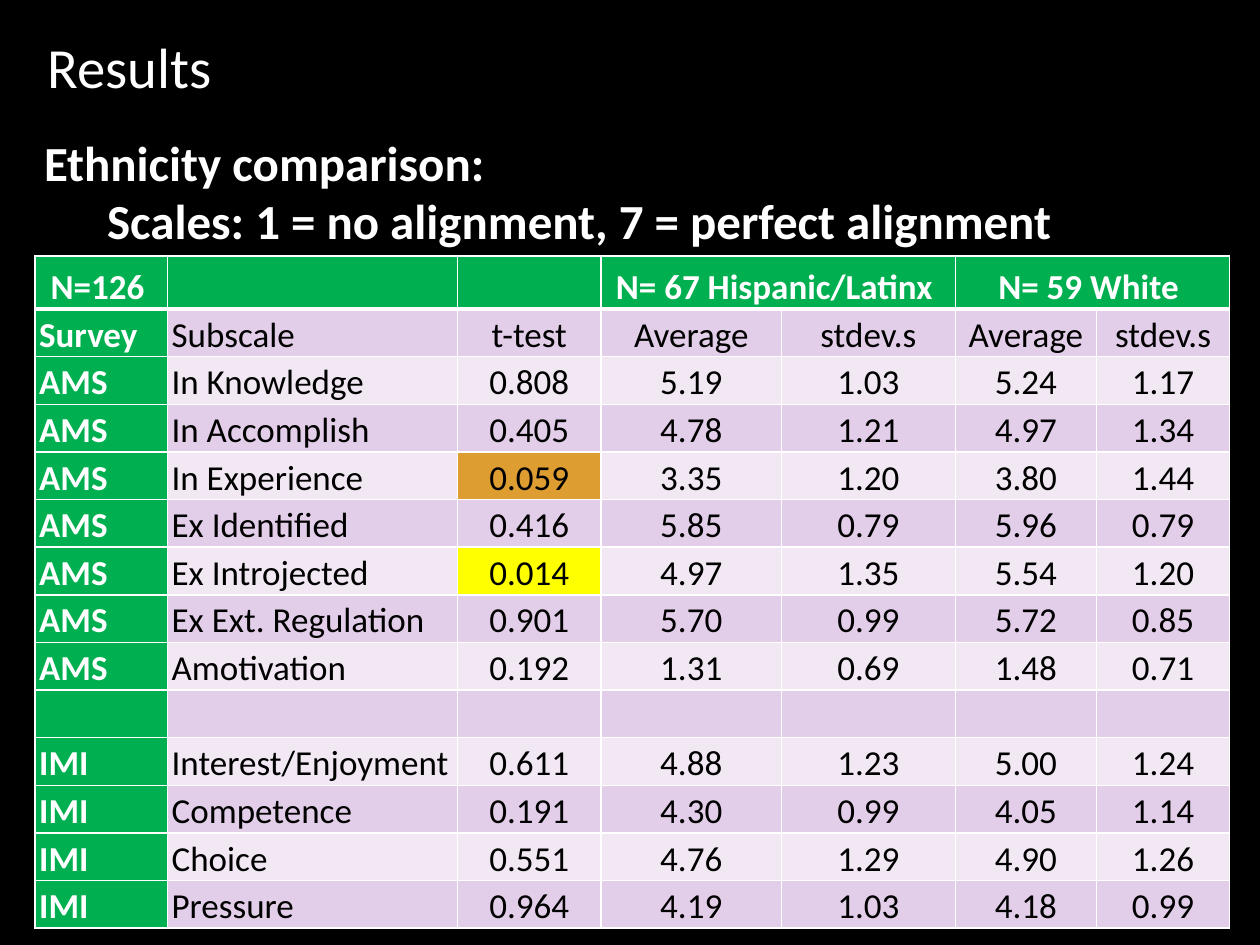
from typing import NamedTuple

from lxml import etree
from pptx import Presentation
from pptx.dml.color import RGBColor
from pptx.enum import text
from pptx.oxml.ns import qn
from pptx.util import Cm, Pt

WHITE, BLACK, GREEN = "FFFFFF", "000000", "00B050"
BANDS = ("E3CEE9", "F1E8F4")
HIGHLIGHTS = {"0.059": "DD9D31", "0.014": "FFFF00"}
COLUMN_WIDTHS = (2.67, 5.84, 2.9, 3.63, 3.51, 2.84, 2.69)
HEADER_HEIGHT, ROW_HEIGHT = 1.07, 0.96


class Row(NamedTuple):
    survey: str = ""
    subscale: str = ""
    t_test: str = ""
    hispanic_average: str = ""
    hispanic_stdev: str = ""
    white_average: str = ""
    white_stdev: str = ""


HEADER = Row("N=126\u00a0", hispanic_average="N= 67 Hispanic/Latinx\u00a0",
             white_average="N= 59 White\u00a0")
ROWS = [
    Row("Survey", "Subscale", "t-test", "Average", "stdev.s", "Average", "stdev.s"),
    Row("AMS", "In Knowledge", "0.808", "5.19", "1.03", "5.24", "1.17"),
    Row("AMS", "In Accomplish", "0.405", "4.78", "1.21", "4.97", "1.34"),
    Row("AMS", "In Experience", "0.059", "3.35", "1.20", "3.80", "1.44"),
    Row("AMS", "Ex Identified", "0.416", "5.85", "0.79", "5.96", "0.79"),
    Row("AMS", "Ex Introjected", "0.014", "4.97", "1.35", "5.54", "1.20"),
    Row("AMS", "Ex Ext. Regulation", "0.901", "5.70", "0.99", "5.72", "0.85"),
    Row("AMS", "Amotivation", "0.192", "1.31", "0.69", "1.48", "0.71"),
    Row(),
    Row("IMI", "Interest/Enjoyment", "0.611", "4.88", "1.23", "5.00", "1.24"),
    Row("IMI", "Competence", "0.191", "4.30", "0.99", "4.05", "1.14"),
    Row("IMI", "Choice", "0.551", "4.76", "1.29", "4.90", "1.26"),
    Row("IMI", "Pressure", "0.964", "4.19", "1.03", "4.18", "0.99"),
]


def rgb(value: str) -> RGBColor:
    return RGBColor.from_string(value)


def write(p, content: str, *, size: float, color: str = WHITE, bold: bool = False,
          align=text.PP_ALIGN.LEFT, spacing: float = 1.0) -> None:
    p.alignment = align
    p.line_spacing = spacing
    p.space_before = Pt(0)
    r = p.add_run()
    r.text = content
    r.font.name, r.font.size, r.font.bold = "Calibri", Pt(size), bold
    r.font.color.rgb = rgb(color)


def set_borders(cell, bottom: float) -> None:
    tc_pr = cell._tc.get_or_add_tcPr()
    widths = {"a:lnL": 1, "a:lnR": 1, "a:lnT": 1, "a:lnB": bottom}
    for i, (tag, width) in enumerate(widths.items()):
        ln = etree.Element(qn(tag), w=str(Pt(width)))
        fill = etree.SubElement(ln, qn("a:solidFill"))
        etree.SubElement(fill, qn("a:srgbClr"), val=WHITE)
        tc_pr.insert(i, ln)


def format_cell(cell, fill: str, bottom: float = 1) -> None:
    cell.fill.solid()
    cell.fill.fore_color.rgb = rgb(fill)
    cell.vertical_anchor = text.MSO_ANCHOR.BOTTOM
    cell.margin_left = cell.margin_right = Cm(0.08)
    cell.margin_top = cell.margin_bottom = 0
    set_borders(cell, bottom)


def add_results_table(s) -> None:
    frame = s.shapes.add_table(
        len(ROWS) + 1, len(COLUMN_WIDTHS), Cm(0.71), Cm(5.16),
        Cm(sum(COLUMN_WIDTHS)), Cm(HEADER_HEIGHT + ROW_HEIGHT * len(ROWS)))
    table = frame.table
    for column, width in zip(table.columns, COLUMN_WIDTHS):
        column.width = Cm(width)
    for i, row in enumerate(table.rows):
        row.height = Cm(ROW_HEIGHT if i else HEADER_HEIGHT)

    for i, row in enumerate([HEADER, *ROWS]):
        for j, value in enumerate(row):
            cell = table.cell(i, j)
            is_head = i == 0 or j == 0
            band = GREEN if is_head else BANDS[(i - 1) % 2]
            format_cell(cell, HIGHLIGHTS.get(value, band), 1 if i else 3)
            if value:
                left = i > 0 and j < 2
                write(cell.text_frame.paragraphs[0], value, size=20,
                      color=WHITE if is_head else BLACK, bold=is_head,
                      align=text.PP_ALIGN.LEFT if left else text.PP_ALIGN.CENTER,
                      spacing=1.06 if left else 1.07)

    # Group headings span an average and a deviation column
    for j in (3, 5):
        table.cell(0, j).merge(table.cell(0, j + 1))


def main() -> None:
    prs = Presentation()
    prs.slide_width, prs.slide_height = Cm(25.4), Cm(19.05)
    s = prs.slides.add_slide(prs.slide_layouts[5])
    s.background.fill.solid()
    s.background.fill.fore_color.rgb = rgb(BLACK)

    # Title
    title = s.shapes.title
    title.left, title.top, title.width, title.height = Cm(0.71), Cm(0.76), Cm(17.45), Cm(1.14)
    title.text_frame.vertical_anchor = text.MSO_ANCHOR.MIDDLE
    write(title.text_frame.paragraphs[0], "Results", size=32.4)

    # Introduction, second line indented
    tf = s.shapes.add_textbox(Cm(0.64), Cm(2.54), Cm(25.98), Cm(16.13)).text_frame
    tf.word_wrap = True
    write(tf.paragraphs[0], "Ethnicity comparison:", size=28, bold=True)
    p = tf.add_paragraph()
    write(p, "Scales: 1 = no alignment, 7 = perfect alignment", size=28, bold=True)
    p._p.get_or_add_pPr().set("marL", str(Cm(1.27)))

    add_results_table(s)
    prs.save("out.pptx")


if __name__ == "__main__":
    main()
